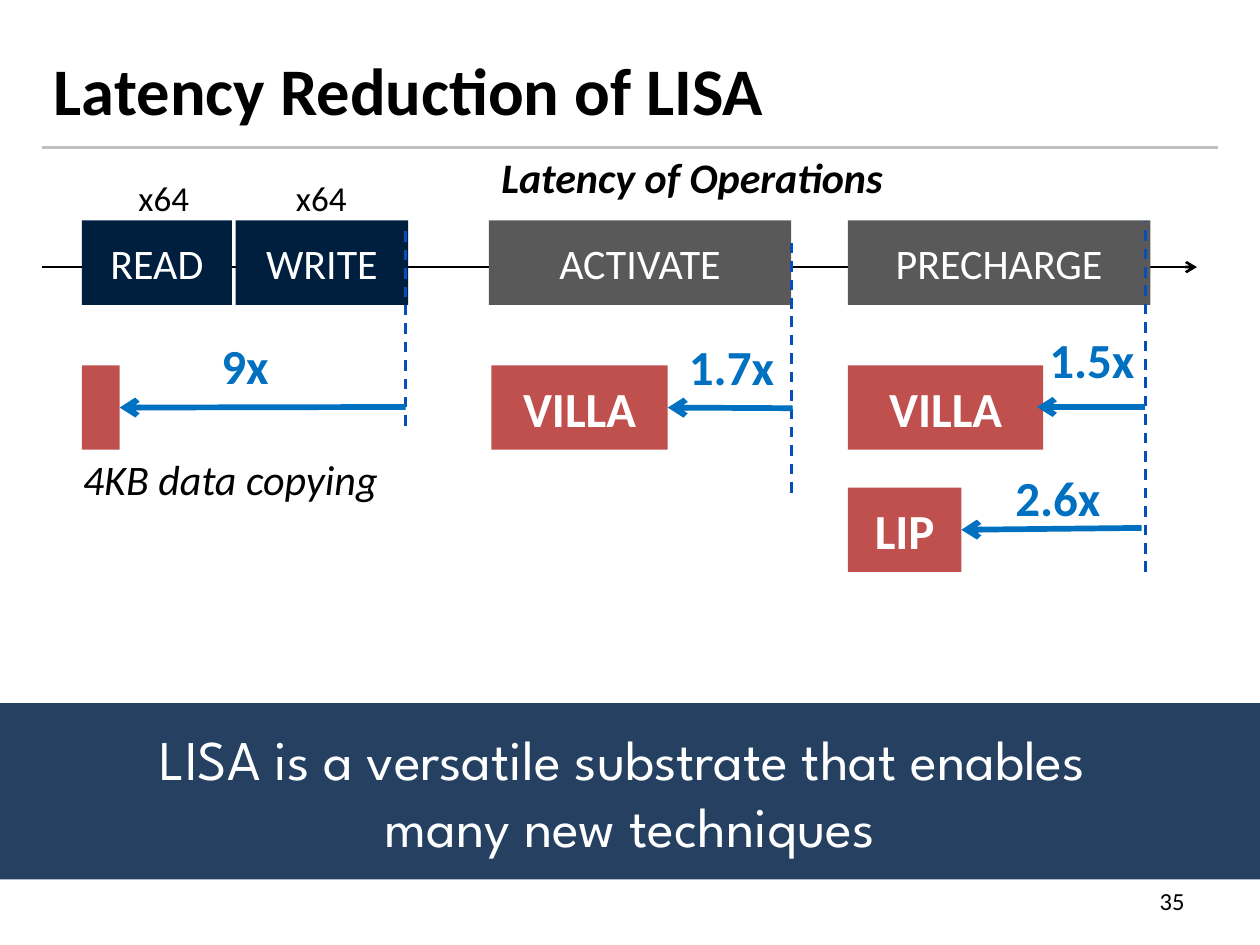
from lxml import etree
from pptx import Presentation
from pptx import util as u
from pptx.dml import color
from pptx.enum import dml, shapes, text
from pptx.oxml import ns

BLACK, WHITE, BLUE, RED, GRAY, NAVY = "000000", "FFFFFF", "0070C0", "C0504D", "595959", "001F3F"
TOP, MID, HIGH = 1.75, 2.9, 0.67
BIG = {"size": 28, "bold": True}
ALIGN = text.PP_ALIGN


def rgb(code):
    """Turn a hex string into a colour."""
    return color.RGBColor.from_string(code)


def write(frame, words, tint, align=ALIGN.LEFT, **form):
    """Put one styled paragraph into a text frame."""
    para = frame.paragraphs[0]
    para.text, para.alignment = words, align
    form = {"name": "Calibri", "size": 24, **form}
    form["size"] = u.Pt(form["size"])
    for run in para.runs:
        run.font.color.rgb = rgb(tint)
        for key, val in form.items():
            setattr(run.font, key, val)


def label(slide, words, x, y, w, h, tint=BLACK, wrap=False, mid=False, **form):
    """Add a text box."""
    frame = slide.shapes.add_textbox(*map(u.Inches, (x, y, w, h))).text_frame
    frame.word_wrap = wrap
    frame.vertical_anchor = text.MSO_ANCHOR.MIDDLE if mid else text.MSO_ANCHOR.TOP
    write(frame, words, tint, **form)


def block(slide, words, x, y, w, fill, h=HIGH, **form):
    """Add a filled rectangle with centred white text."""
    box = slide.shapes.add_shape(shapes.MSO_SHAPE.RECTANGLE, *map(u.Inches, (x, y, w, h)))
    box.shadow.inherit = False
    box.fill.solid()
    box.fill.fore_color.rgb = rgb(fill)
    box.line.fill.background()
    box.text_frame.vertical_anchor = text.MSO_ANCHOR.MIDDLE
    if words:
        write(box.text_frame, words, WHITE, ALIGN.CENTER, **form)
    return box


def rule(slide, x1, y1, x2, y2, tint, wide=1.5, dash=False, head=False, goal=None):
    """Add a line, with optional dashes, arrowhead and box to point at."""
    line = slide.shapes.add_connector(
        shapes.MSO_CONNECTOR.STRAIGHT, *map(u.Inches, (x1, y1, x2, y2)))
    line.line.color.rgb = rgb(tint)
    line.line.width = u.Pt(wide)
    if dash:
        line.line.dash_style = dml.MSO_LINE.DASH
    if head:
        etree.SubElement(line.line._get_or_add_ln(), ns.qn("a:tailEnd"), type="arrow")
    etree.SubElement(line._element.spPr, ns.qn("a:effectLst"))
    if goal is not None:
        line.end_connect(goal, 3)


def main():
    """Build the slide."""
    deck = Presentation()
    deck.slide_width, deck.slide_height = u.Inches(10), u.Inches(7.5)
    slide = deck.slides.add_slide(deck.slide_layouts[6])

    rule(slide, 0.33, 1.17, 9.67, 1.17, "BFBFBF")
    label(slide, "Latency Reduction of LISA", 0.33, 0.08, 9.33, 1.25,
          wrap=True, mid=True, size=38, bold=True)
    label(slide, "35", 7.17, 6.95, 2.33, 0.4, wrap=True, mid=True, size=14, align=ALIGN.RIGHT)
    label(slide, "Latency of Operations", 3.88, 1.15, 3.52, 0.5, bold=True, italic=True)

    rule(slide, 0.33, 2.12, 9.5, 2.12, BLACK, head=True)
    for words, x, w, fill in (("READ", 0.65, 1.19, NAVY), ("WRITE", 1.87, 1.37, NAVY),
                              ("ACTIVATE", 3.88, 2.4, GRAY), ("PRECHARGE", 6.73, 2.4, GRAY)):
        block(slide, words, x, TOP, w, fill)
    for x in (1, 2.25):
        label(slide, "x64", x, 1.35, 0.62, 0.44, size=20)
    for x, low, high in ((3.22, 3.38, 1.78), (6.28, 3.91, 1.89), (9.09, 4.54, TOP)):
        rule(slide, x, low, x, high, "064FBA", dash=True)

    bar = block(slide, "", 0.65, MID, 0.3, RED)
    villa = block(slide, "VILLA", 3.9, MID, 1.4, RED, **BIG)
    block(slide, "VILLA", 6.73, MID, 1.55, RED, **BIG)
    lip = block(slide, "LIP", 6.73, 3.87, 0.9, RED, **BIG)
    for x1, y1, x2, y2, goal in ((3.22, 3.23, 0.95, 3.23, bar), (6.29, 3.24, 5.3, 3.23, villa),
                                 (9.09, 3.23, 8.23, 3.23, None), (9.06, 4.19, 7.63, 4.2, lip)):
        rule(slide, x1, y1, x2, y2, BLUE, 3.25, head=True, goal=goal)
    for words, x, y, w in (("9x", 1.66, 2.61, 0.64), ("1.7x", 5.37, 2.62, 0.96),
                           ("1.5x", 8.23, 2.57, 0.96), ("2.6x", 7.96, 3.66, 0.96)):
        label(slide, words, x, y, w, 0.57, BLUE, **BIG)

    label(slide, "4KB data copying", 0.56, 3.55, 3.02, 0.5, wrap=True, italic=True)
    block(slide, "LISA is a versatile substrate that enables \nmany new techniques",
          0, 5.58, 10, "254061", 1.4, name="League Spartan", size=32)
    deck.save("out.pptx")


if __name__ == "__main__":
    main()
